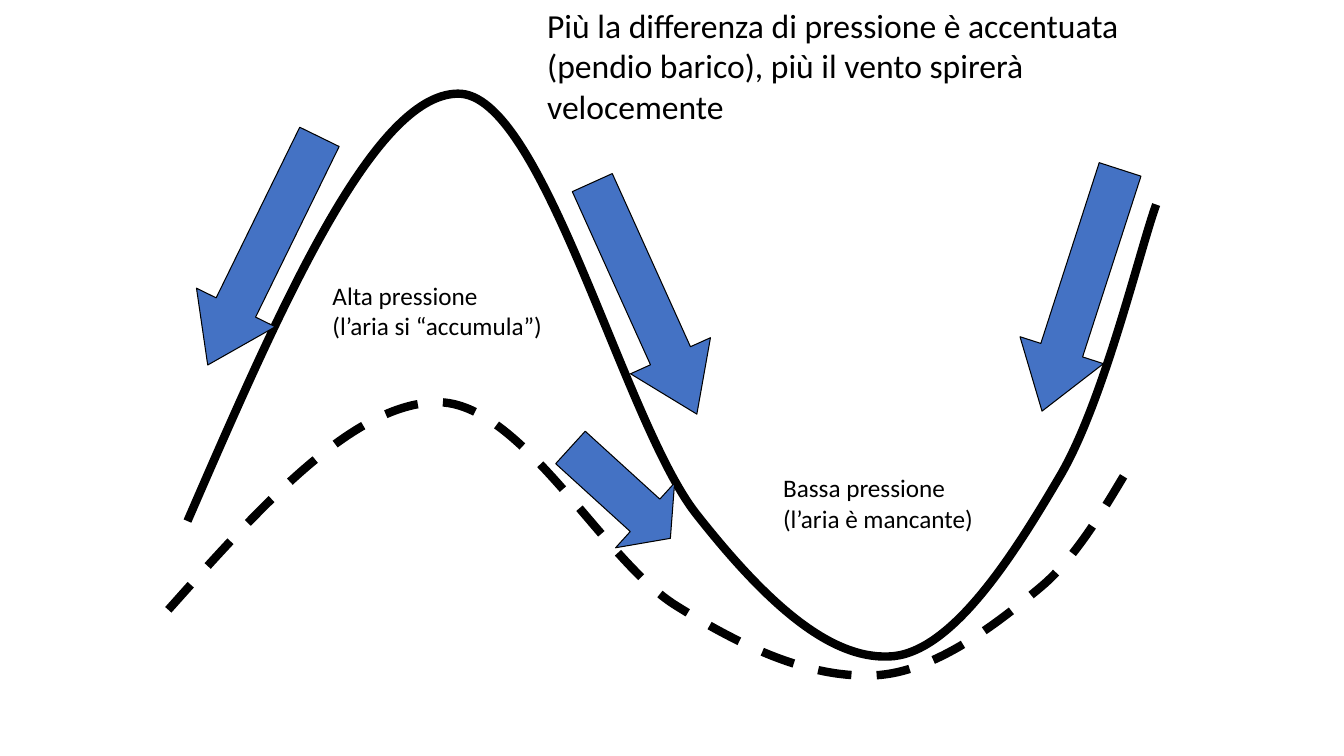
from lxml.etree import SubElement
from pptx import Presentation
from pptx.dml.color import RGBColor
from pptx.enum.dml import MSO_LINE
from pptx.enum.shapes import MSO_SHAPE
from pptx.oxml.ns import qn
from pptx.util import Inches, Pt

PX = 9144  # EMU per px, 100 px to the inch
BLACK, BLUE = "000000", "4472C4"

# Start point, then two control points and an end point per segment
STEEP_SLOPE = [
    (186, 517),
    (278, 305), (370, 94), (454, 93),
    (538, 91), (618, 416), (690, 509),
    (763, 602), (827, 657), (887, 651),
    (948, 644), (1009, 545), (1053, 470),
    (1096, 395), (1131, 247), (1147, 203),
]
GENTLE_SLOPE = [
    (167, 605),
    (259, 502), (350, 400), (434, 399),
    (518, 399), (598, 556), (671, 601),
    (743, 646), (807, 673), (868, 670),
    (928, 667), (990, 618), (1033, 582),
    (1076, 546), (1112, 474), (1127, 453),
]
WIND_WIDTH = 87


def color(hex_code):
    return RGBColor.from_string(hex_code)


def bend_path(curve):
    """Turn every three straight pieces into one cubic Bézier segment."""
    path = next(curve.element.iter(qn("a:path")))
    pieces = path.findall(qn("a:lnTo"))
    for first in range(0, len(pieces), 3):
        bezier = SubElement(path, qn("a:cubicBezTo"))
        for piece in pieces[first:first + 3]:
            bezier.append(piece[0])
            path.remove(piece)


def add_curve(slide, knots, dash=None):
    builder = slide.shapes.build_freeform(*knots[0], scale=PX)
    builder.add_line_segments(knots[1:], close=False)
    curve = builder.convert_to_shape()
    bend_path(curve)
    curve.shadow.inherit = False
    curve.fill.background()
    curve.line.color.rgb = color(BLACK)
    curve.line.width = Pt(6)
    if dash:
        curve.line.dash_style = dash


def add_wind(slide, left, top, height, rotation, head):
    """Add a wind arrow; head is its length relative to the arrow's width."""
    wind = slide.shapes.add_shape(
        MSO_SHAPE.DOWN_ARROW, left * PX, top * PX, WIND_WIDTH * PX, height * PX)
    wind.rotation = rotation
    wind.adjustments[0] = 0.5
    wind.adjustments[1] = head
    wind.shadow.inherit = False
    wind.fill.solid()
    wind.fill.fore_color.rgb = color(BLUE)
    wind.line.color.rgb = color(BLACK)
    wind.line.width = Pt(0.75)


def add_text(slide, left, top, width, height, lines, size=18, wrap=False):
    frame = slide.shapes.add_textbox(
        left * PX, top * PX, width * PX, height * PX).text_frame
    frame.word_wrap = wrap
    for index, line in enumerate(lines):
        paragraph = frame.add_paragraph() if index else frame.paragraphs[0]
        run = paragraph.add_run()
        run.text = line
        run.font.name = "Calibri"
        run.font.size = Pt(size)
        run.font.color.rgb = color(BLACK)


def main():
    deck = Presentation()
    deck.slide_width, deck.slide_height = Inches(13.333), Inches(7.5)
    slide = deck.slides.add_slide(deck.slide_layouts[6])

    add_curve(slide, STEEP_SLOPE)
    add_text(slide, 320, 273, 230, 71,
             ["Alta pressione", "(l’aria si “accumula”)"])
    add_text(slide, 767, 464, 211, 71,
             ["Bassa pressione", "(l’aria è mancante)"])
    add_wind(slide, 596, 170, 252, 335.7, 0.73)
    add_wind(slide, 218, 123, 252, 26.1, 0.73)
    add_wind(slide, 1029, 162, 252, 17.9, 0.73)
    add_curve(slide, GENTLE_SLOPE, MSO_LINE.DASH)
    add_wind(slide, 572, 422, 134, 312.3, 0.39)
    add_text(slide, 533, 0, 593, 131,
             ["Più la differenza di pressione è accentuata (pendio barico), "
              "più il vento spirerà velocemente"], size=24, wrap=True)

    deck.save("out.pptx")


if __name__ == "__main__":
    main()
